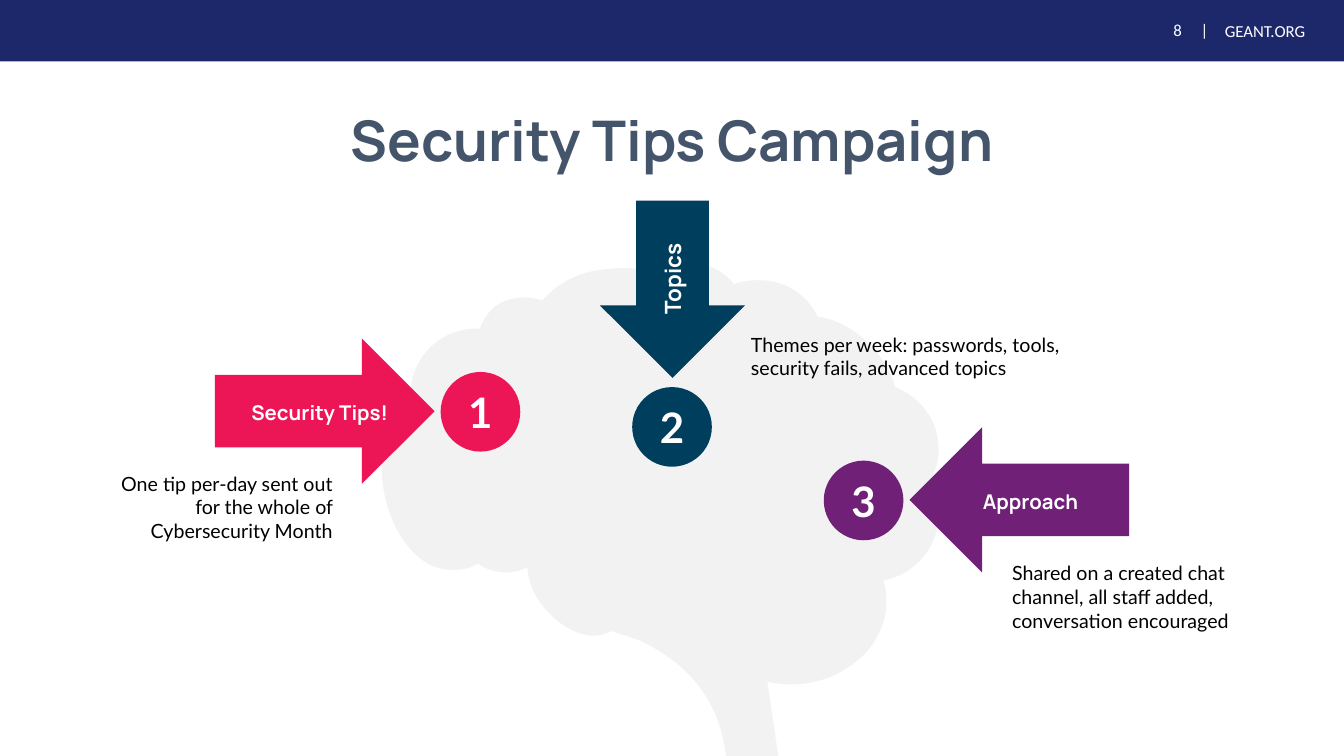
from dataclasses import dataclass

import lxml.etree
import pptx
import pptx.dml.color
import pptx.enum.shapes
import pptx.enum.text
import pptx.oxml.ns
import pptx.util

Align = pptx.enum.text.PP_ALIGN
Anchor = pptx.enum.text.MSO_ANCHOR
Preset = pptx.enum.shapes.MSO_SHAPE
qualified = pptx.oxml.ns.qn

SLIDE_WIDTH = pptx.util.Inches(13.33)
SLIDE_HEIGHT = pptx.util.Inches(7.5)
ROWS = 750  # square grid cells, counted down the slide
CELL = SLIDE_HEIGHT / ROWS
DISC_SIZE = 79
NOTE_WIDTH = 253
LABEL_WIDTH = 196


@dataclass(frozen=True)
class Theme:
    banner: str = "1D286B"
    heading: str = "44546A"
    brain: str = "F2F2F2"
    pink: str = "EC1556"
    teal: str = "003E5E"
    purple: str = "702077"
    light: str = "FFFFFF"
    dark: str = "000000"
    heading_font: str = "Manrope"
    body_font: str = "Lato"
    banner_font: str = "Calibri"
    heading_size: float = 40
    number_size: float = 30
    topic_size: float = 16
    label_size: float = 14.5
    note_size: float = 14
    banner_size: float = 12


THEME = Theme()


@dataclass(frozen=True)
class Box:
    """A rectangle in grid cells."""
    left: float
    top: float
    width: float
    height: float

    def emu(self) -> list[int]:
        return [cells(value) for value in (self.left, self.top, self.width, self.height)]


@dataclass(frozen=True)
class Step:
    number: str
    colour: str
    arrow: Preset
    arrow_box: Box
    disc_left: float
    disc_top: float
    label: str
    label_box: Box
    note: str
    note_box: Box
    note_align: Align = Align.LEFT
    label_size: float = THEME.label_size
    label_rotation: float = 0


STEPS = [
    Step("1", THEME.pink, Preset.RIGHT_ARROW, Box(213, 336, 218, 144), 437, 369,
         "Security Tips!", Box(219, 392, LABEL_WIDTH, 35),
         "One tip per-day sent out for the whole of Cybersecurity Month",
         Box(87, 463, NOTE_WIDTH, 81), note_align=Align.RIGHT),
    Step("2", THEME.teal, Preset.DOWN_ARROW, Box(595, 199, 144, 176), 627, 384,
         "Topics", Box(569, 258, LABEL_WIDTH, 37),
         "Themes per week: passwords, tools, security fails, advanced topics",
         Box(735, 325, 362, 57), label_size=THEME.topic_size, label_rotation=270),
    Step("3", THEME.purple, Preset.LEFT_ARROW, Box(902, 424, 218, 144), 817, 457,
         "Approach", Box(924, 480, LABEL_WIDTH, 35),
         "Shared on a created chat channel, all staff added, conversation encouraged",
         Box(994, 552, NOTE_WIDTH, 81)),
]

# Each row holds two control points and an end point, or only the end point of a line.
BRAIN_START = (924, 485)
BRAIN_OUTLINE = [
    (924, 482, 923, 480, 921, 479), (928, 469, 931, 457, 931, 446),
    (931, 417, 913, 394, 888, 384), (884, 370, 876, 355, 862, 342),
    (848, 326, 829, 317, 811, 314), (800, 292, 779, 278, 753, 278),
    (744, 278, 736, 279, 728, 282), (719, 270, 705, 262, 689, 262),
    (677, 262, 666, 267, 658, 275), (642, 267, 623, 264, 604, 267),
    (576, 268, 553, 281, 538, 298), (534, 297, 527, 295, 521, 295),
    (510, 295, 499, 298, 491, 304), (483, 311, 479, 318, 476, 326),
    (474, 326, 472, 326, 472, 326), (436, 326, 407, 356, 407, 392),
    (407, 394), (386, 411, 375, 444, 380, 482),
    (385, 519, 405, 551, 430, 562), (432, 562, 432, 562, 433, 563),
    (441, 565, 447, 566, 455, 565), (463, 565, 469, 562, 474, 559),
    (482, 565, 493, 568, 502, 568), (510, 568, 516, 566, 523, 563),
    (524, 574, 527, 584, 534, 595), (553, 623, 584, 639, 606, 626),
    (631, 634), (664, 648, 713, 681, 720, 750), (772, 750), (761, 676),
    (769, 678, 777, 679, 785, 679), (805, 679, 824, 673, 838, 664),
    (841, 662, 844, 661, 848, 657), (865, 645, 877, 624, 879, 603),
    (879, 601, 879, 598, 879, 596), (879, 590, 879, 584, 877, 579),
    (877, 577, 876, 576, 876, 576), (907, 570, 931, 543, 931, 511),
    (931, 510, 931, 508, 931, 507), (931, 499, 929, 491, 924, 485),
]


def cells(count: float) -> int:
    return round(count * CELL)


def rgb(colour: str) -> pptx.dml.color.RGBColor:
    return pptx.dml.color.RGBColor.from_string(colour)


def paint(shape, colour: str) -> None:
    shape.shadow.inherit = False
    shape.fill.solid()
    shape.fill.fore_color.rgb = rgb(colour)
    shape.line.fill.background()


def add_preset(slide, preset: Preset, box: Box, colour: str):
    shape = slide.shapes.add_shape(preset, *box.emu())
    paint(shape, colour)
    return shape


def write(shape, text: str, *, font: str, size: float, colour: str = THEME.light,
          bold: bool = False, align: Align = Align.LEFT, anchor: Anchor = Anchor.TOP,
          wrap: bool = True, tab: float | None = None) -> None:
    frame = shape.text_frame
    frame.word_wrap = wrap
    frame.vertical_anchor = anchor
    paragraph = frame.paragraphs[0]
    paragraph.alignment = align
    if tab is not None:
        tabs = lxml.etree.SubElement(paragraph._p.get_or_add_pPr(), qualified("a:tabLst"))
        lxml.etree.SubElement(tabs, qualified("a:tab"), pos=str(cells(tab)), algn="l")
    run = paragraph.add_run()
    run.text = text
    run.font.name = font
    run.font.size = pptx.util.Pt(size)
    run.font.bold = bold
    run.font.color.rgb = rgb(colour)


def add_text(slide, box: Box, text: str, rotation: float = 0, **text_format) -> None:
    shape = slide.shapes.add_textbox(*box.emu())
    shape.rotation = rotation
    write(shape, text, **text_format)


def bend(shape, segments: list[tuple]) -> None:
    """Join the three lines laid for each six-number segment into one cubic curve."""
    lines = iter(list(shape._element.iter(qualified("a:lnTo"))))
    for segment in segments:
        group = [next(lines) for _ in range(len(segment) // 2)]
        if len(group) == 3:
            curve = lxml.etree.Element(qualified("a:cubicBezTo"))
            group[0].addprevious(curve)
            for line in group:
                curve.append(line[0])
                line.getparent().remove(line)


def add_brain(slide) -> None:
    points = [(cells(x), cells(y)) for segment in BRAIN_OUTLINE
              for x, y in zip(segment[::2], segment[1::2])]
    builder = slide.shapes.build_freeform(*map(cells, BRAIN_START))
    builder.add_line_segments(points, close=True)
    brain = builder.convert_to_shape()
    bend(brain, BRAIN_OUTLINE)
    paint(brain, THEME.brain)


def add_banner(slide) -> None:
    add_preset(slide, Preset.RECTANGLE, Box(0, -4, 1333, 65), THEME.banner)
    banner_format = dict(font=THEME.banner_font, size=THEME.banner_size,
                         anchor=Anchor.MIDDLE, wrap=False)
    add_text(slide, Box(1154, 12, 55, 36), "8\t|", tab=27, **banner_format)
    add_text(slide, Box(1205, 15, 120, 32), "GEANT.ORG", **banner_format)


def add_step(slide, step: Step) -> None:
    add_preset(slide, step.arrow, step.arrow_box, step.colour)
    disc = add_preset(slide, Preset.OVAL,
                      Box(step.disc_left, step.disc_top, DISC_SIZE, DISC_SIZE), step.colour)
    write(disc, step.number, font=THEME.body_font, size=THEME.number_size,
          bold=True, align=Align.CENTER, anchor=Anchor.MIDDLE)
    add_text(slide, step.label_box, step.label, step.label_rotation, font=THEME.heading_font,
             size=step.label_size, bold=True, align=Align.CENTER)
    add_text(slide, step.note_box, step.note, font=THEME.body_font,
             size=THEME.note_size, colour=THEME.dark, align=step.note_align)


def main() -> None:
    presentation = pptx.Presentation()
    presentation.slide_width = SLIDE_WIDTH
    presentation.slide_height = SLIDE_HEIGHT
    slide = presentation.slides.add_slide(presentation.slide_layouts[6])
    add_banner(slide)
    add_brain(slide)
    for step in STEPS:
        add_step(slide, step)
    add_text(slide, Box(311, 100, 711, 77), "Security Tips Campaign", font=THEME.heading_font,
             size=THEME.heading_size, colour=THEME.heading, bold=True,
             align=Align.CENTER, wrap=False)
    presentation.save("out.pptx")


if __name__ == "__main__":
    main()
